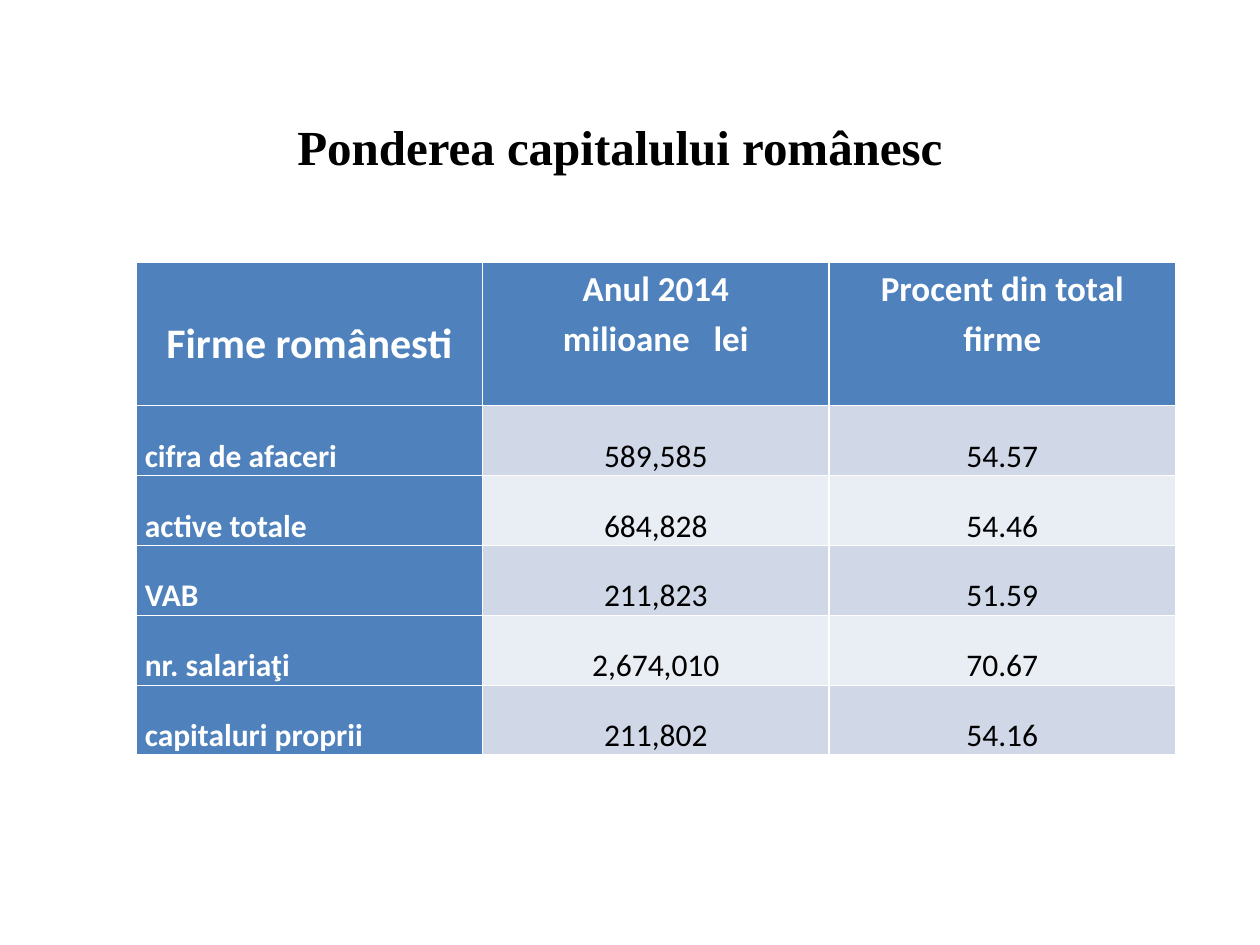
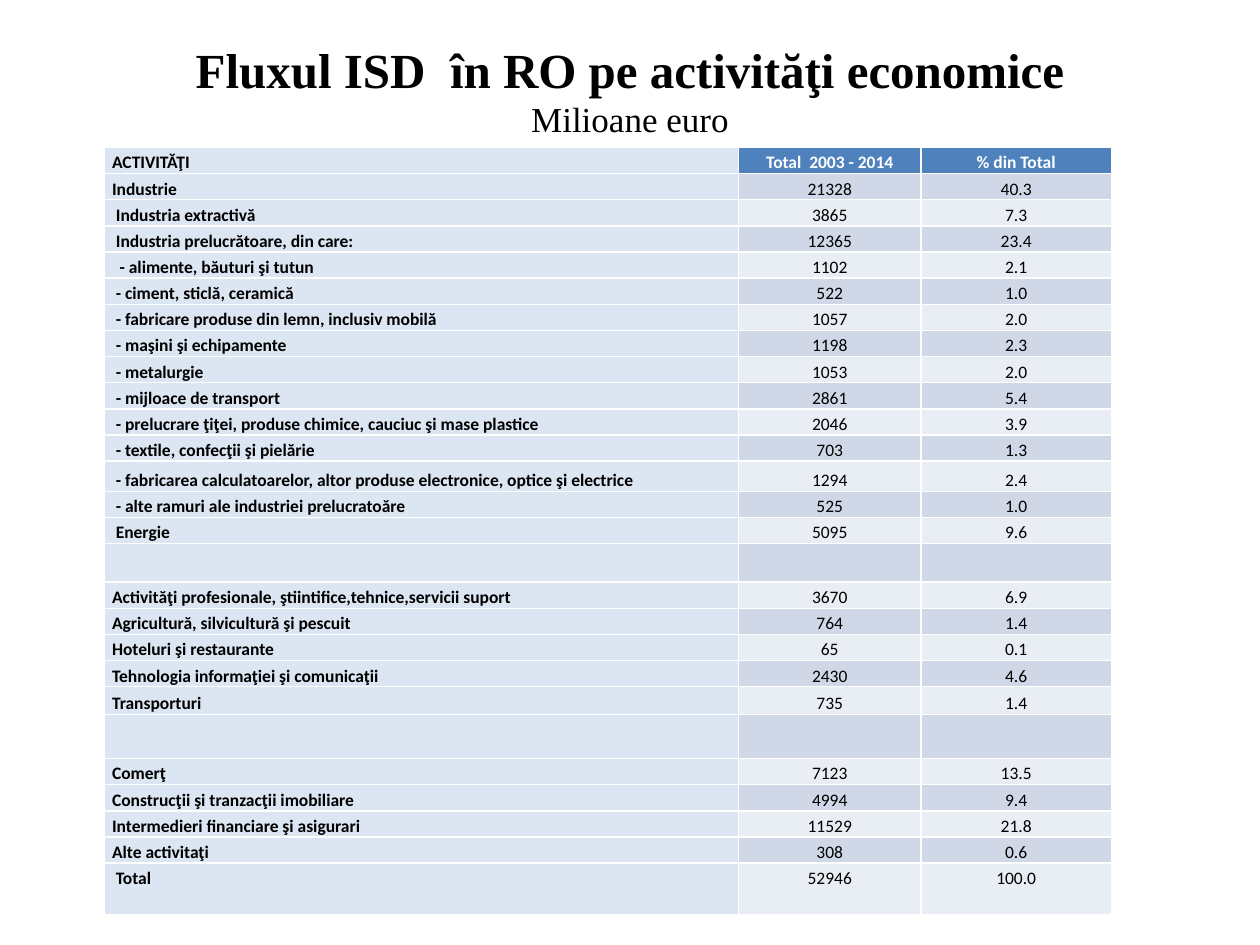
from pptx import Presentation
from pptx.dml.color import RGBColor
from pptx.enum.text import MSO_ANCHOR, MSO_AUTO_SIZE, PP_ALIGN
from pptx.util import Inches, Pt

LEFT, CENTER = PP_ALIGN.LEFT, PP_ALIGN.CENTER
TOP, MIDDLE, BOTTOM = MSO_ANCHOR.TOP, MSO_ANCHOR.MIDDLE, MSO_ANCHOR.BOTTOM
COLORS = {
    "header": "4F81BD", "label": "DCE6F2", "odd": "D0D8E8", "even": "E9EDF4",
    "white": "FFFFFF", "black": "000000",
}
TITLE_FONT, TABLE_FONT = "Times New Roman", "Calibri"
TITLE_WIDTH, TITLE_HEIGHT = 9, 1.25

presentation = Presentation()
presentation.slide_width, presentation.slide_height = Inches(10), Inches(7.5)
title_only = presentation.slide_layouts[5]


def add_titled_slide(left, top, lines):
    """Add a slide whose title has one line per (text, size, bold)."""
    slide = presentation.slides.add_slide(title_only)
    title = slide.shapes.title
    title.left, title.top = Inches(left), Inches(top)
    title.width, title.height = Inches(TITLE_WIDTH), Inches(TITLE_HEIGHT)
    frame = title.text_frame
    frame.word_wrap = True
    frame.auto_size = MSO_AUTO_SIZE.NONE
    frame.vertical_anchor = MIDDLE
    frame.margin_bottom = Inches(0.48)
    paragraph = frame.paragraphs[0]
    paragraph.alignment = CENTER
    paragraph.font.name = TITLE_FONT
    paragraph.font.color.rgb = RGBColor.from_string(COLORS["black"])
    for index, (text, size, bold) in enumerate(lines):
        if index:
            paragraph.add_line_break()
        run = paragraph.add_run()
        run.text = text
        run.font.size, run.font.bold = Pt(size), bold
    return slide


def format_cell(cell, text, fill, color, size, bold, alignment, anchor, margin):
    cell.fill.solid()
    cell.fill.fore_color.rgb = RGBColor.from_string(COLORS[fill])
    cell.vertical_anchor = anchor
    cell.margin_left = cell.margin_right = Inches(margin)
    cell.margin_top = cell.margin_bottom = 0
    if not text:
        return
    cell.text = text
    for paragraph in cell.text_frame.paragraphs:
        paragraph.alignment = alignment
        paragraph.line_spacing = 1.15
        paragraph.font.name = TABLE_FONT
        paragraph.font.size, paragraph.font.bold = Pt(size), bold
        paragraph.font.color.rgb = RGBColor.from_string(COLORS[color])


# Slide 1: share of Romanian capital
slide = add_titled_slide(0.42, 0.75, [("Ponderea capitalului românesc", 28, True)])
capital_rows = [
    ("Firme românesti", "Anul 2014\nmilioane   lei", "Procent din total firme"),
    ("cifra de afaceri", "589,585", "54.57"),
    ("active totale", "684,828", "54.46"),
    ("VAB", "211,823", "51.59"),
    ("nr. salariaţi", "2,674,010", "70.67"),
    ("capitaluri proprii", "211,802", "54.16"),
]
header_height, row_height = 1.14, 0.555
table = slide.shapes.add_table(
    len(capital_rows), 3, Inches(1.08), Inches(2.08), Inches(8.25), Inches(3.92)
).table
for row, texts in enumerate(capital_rows):
    table.rows[row].height = Inches(row_height if row else header_height)
    band = "odd" if row % 2 else "even"
    for column, text in enumerate(texts):
        cell = table.cell(row, column)
        if row == 0:
            size = 20 if column else 24
            format_cell(cell, text, "header", "white", size, True, CENTER, TOP, 0.07)
        elif column == 0:
            format_cell(cell, text, "header", "white", 18, True, LEFT, BOTTOM, 0.07)
        else:
            format_cell(cell, text, band, "black", 18, False, CENTER, BOTTOM, 0.07)
table.cell(0, 0).margin_top = Inches(0.39)

# Slide 2: foreign direct investment by activity
slide = add_titled_slide(0.5, 0.3, [
    ("Fluxul ISD  în RO pe activităţi economice", 28, True),
    ("Milioane euro", 20, False),
])
# Indent level, activity, total, percent
activity_rows = [
    (0, "ACTIVITĂŢI", "Total  2003 - 2014", "% din Total"),
    (0, "Industrie", "21328", "40.3"),
    (1, "Industria extractivă", "3865", "7.3"),
    (1, "Industria prelucrătoare, din care:", "12365", "23.4"),
    (2, "- alimente, băuturi şi tutun", "1102", "2.1"),
    (1, "- ciment, sticlă, ceramică", "522", "1.0"),
    (1, "- fabricare produse din lemn, inclusiv mobilă", "1057", "2.0"),
    (1, "- maşini şi echipamente", "1198", "2.3"),
    (1, "- metalurgie", "1053", "2.0"),
    (1, "- mijloace de transport", "2861", "5.4"),
    (1, "- prelucrare ţiţei, produse chimice, cauciuc şi mase plastice", "2046", "3.9"),
    (1, "- textile, confecţii şi pielărie", "703", "1.3"),
    (1, "- fabricarea calculatoarelor, altor produse electronice, optice şi electrice",
     "1294", "2.4"),
    (1, "- alte ramuri ale industriei prelucratoăre", "525", "1.0"),
    (1, "Energie", "5095", "9.6"),
    (0, "", "", ""),
    (0, "Activităţi profesionale, ştiintifice,tehnice,servicii suport", "3670", "6.9"),
    (0, "Agricultură, silvicultură şi pescuit", "764", "1.4"),
    (0, "Hoteluri şi restaurante", "65", "0.1"),
    (0, "Tehnologia informaţiei şi comunicaţii", "2430", "4.6"),
    (0, "Transporturi", "735", "1.4"),
    (0, "", "", ""),
    (0, "Comerţ", "7123", "13.5"),
    (0, "Construcţii şi tranzacţii imobiliare", "4994", "9.4"),
    (0, "Intermedieri financiare şi asigurari", "11529", "21.8"),
    (0, "Alte activitaţi", "308", "0.6"),
    (1, "Total", "52946", "100.0"),
]
table_height = 6.09
total_row = len(activity_rows) - 1
special_heights = {12: 0.24, 15: 0.3, 20: 0.22, 21: 0.35, total_row: 0.41}
row_height = (table_height - sum(special_heights.values())) / (
    len(activity_rows) - len(special_heights))
table = slide.shapes.add_table(
    len(activity_rows), 3, Inches(0.83), Inches(1.17), Inches(8), Inches(table_height)
).table
for column, width in enumerate((5.03, 1.45, 1.51)):
    table.columns[column].width = Inches(width)
for row, (level, *texts) in enumerate(activity_rows):
    table.rows[row].height = Inches(special_heights.get(row, row_height))
    band = "odd" if row % 2 else "even"
    for column, text in enumerate(texts):
        cell = table.cell(row, column)
        if column == 0:
            format_cell(cell, text, "label", "black", 10, True, LEFT, BOTTOM, 0.06)
            cell.margin_left = Inches(0.06 + 0.03 * level)
        elif row == 0:
            format_cell(cell, text, "header", "white", 10, True, CENTER, BOTTOM, 0.06)
        else:
            format_cell(cell, text, band, "black", 10, False, CENTER, BOTTOM, 0.06)
        if row == total_row:
            cell.margin_bottom = Inches(0.2)

presentation.save("out.pptx")
